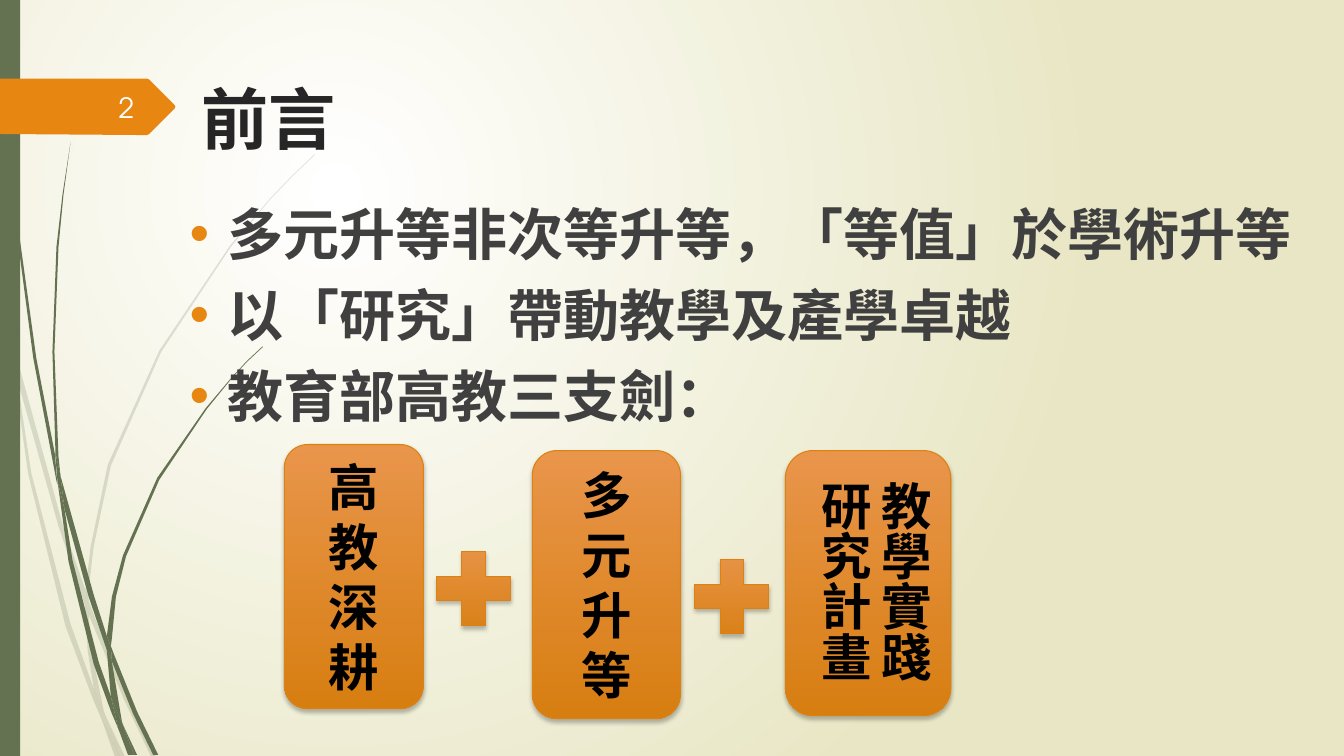
import pptx
import pptx.util
import pptx.oxml
import pptx.oxml.ns
import pptx.dml.color
import pptx.enum.shapes
import pptx.enum.text
from lxml import etree

Inches, Pt, qn = pptx.util.Inches, pptx.util.Pt, pptx.oxml.ns.qn
SHAPE = pptx.enum.shapes.MSO_SHAPE
ALIGN = pptx.enum.text.PP_ALIGN
ANCHOR = pptx.enum.text.MSO_ANCHOR
AUTOSIZE = pptx.enum.text.MSO_AUTO_SIZE

COLORS = {
    "paper": "FFFFFF", "sand": "E8E6C4", "moss": "647252", "tag": "E78712",
    "title": "262626", "body": "404040", "number": "FEFFFF", "ink": "000000",
    "glow": "E9954B", "amber": "D77E11", "edge": "DD8111",
}
HEADING_FONT = "Noto Sans CJK SC"
NUMBER_FONT = "TeX Gyre Adventor"

PALE_BLADES = [
    [(.11, 3.5), (.09, 3.22), (0, 2.82), (0, 2.99), (.1, 3.44)],
    [(.58, 5.22), (.84, 5.99), (.85, 5.86), (.62, 5.2), (.14, 3.45), (.17, 3.76)],
    [(.92, 6.07), (.88, 5.96), (.88, 6.1), (1.23, 6.94), (1.5, 7.51), (1.55, 7.51), (1.27, 6.92)],
    [(1.19, 7.51), (1.24, 7.51), (1.05, 7.11)],
    [(.93, 6.83), (.7, 6.19), (.31, 4.69), (.17, 3.76), (.11, 3.5), (.28, 4.7), (.65, 6.21),
     (.92, 6.93), (1.01, 7.14), (.99, 7.07)],
    [(.84, 5.99), (.87, 6.46), (.93, 6.83), (.96, 6.92), (1.05, 7.11), (1.03, 7.06), (.91, 6.46),
     (.88, 6.1), (.88, 6.08)],
    [(.88, 5.84), (.93, 5.42), (1.1, 4.62), (1.6, 3.49), (2.29, 2.45), (2.68, 1.98), (2.9, 1.75),
     (3.12, 1.54), (3.12, 1.53), (2.89, 1.75), (2.68, 1.97), (2.28, 2.44), (1.58, 3.48),
     (1.07, 4.61), (.9, 5.42), (.85, 5.84), (.85, 5.86), (.88, 5.96)],
    [(1.01, 7.14), (1.14, 7.51), (1.19, 7.51)],
    [(.88, 6.08), (.88, 6.1), (.88, 5.96), (.85, 5.86), (.84, 5.99)],
    [(.96, 6.92), (.93, 6.83), (.99, 7.07), (1.01, 7.14), (1.19, 7.51), (1.05, 7.11)],
]
DARK_BLADES = [
    [(.07, 1.1), (.17, 2.33), (.33, 3.55), (.56, 4.77), (.57, 4.81), (.55, 4.57), (.55, 4.53),
     (.36, 3.55), (.19, 2.32), (.08, 1.09), (.05, .48), (.04, 0), (.03, 0), (.04, .48)],
    [(.88, 5.92), (1.06, 6.45), (1.06, 6.31), (.93, 5.9), (.6, 4.72), (.64, 5.05)],
    [(1.13, 6.49), (1.1, 6.41), (1.11, 6.56), (1.32, 7.08), (1.52, 7.49), (1.57, 7.49), (1.36, 7.06)],
    [(1.1, 6.91), (.98, 6.57), (.72, 5.56), (.64, 5.05), (.57, 4.77), (.68, 5.57), (.93, 6.59),
     (1.11, 7.08), (1.17, 7.22), (1.16, 7.17)],
    [(.6, 4.72), (.58, 4.53), (.54, 3.49), (.58, 2.45), (.63, 1.93), (.7, 1.41), (.62, 1.93),
     (.56, 2.45), (.52, 3.49), (.55, 4.49)],
    [(1.33, 7.49), (1.36, 7.49), (1.22, 7.19)],
    [(.57, 4.77), (.64, 5.05), (.6, 4.72), (.55, 4.49), (.55, 4.53)],
    [(1.11, 6.33), (1.15, 5.92), (1.25, 5.52), (1.58, 4.76), (2.05, 4.06), (2.31, 3.74),
     (2.45, 3.59), (2.61, 3.44), (2.6, 3.44), (2.45, 3.58), (2.31, 3.73), (2.04, 4.05),
     (1.56, 4.74), (1.22, 5.51), (1.11, 5.92), (1.06, 6.31), (1.1, 6.41)],
    [(1.17, 7.22), (1.27, 7.49), (1.31, 7.49)],
    [(1.06, 6.45), (1.1, 6.91), (1.16, 7.06), (1.22, 7.19), (1.21, 7.16), (1.11, 6.56), (1.09, 6.51)],
    [(1.06, 6.45), (1.09, 6.51), (1.11, 6.56), (1.1, 6.41), (1.06, 6.31)],
    [(1.16, 7.06), (1.1, 6.91), (1.16, 7.17), (1.17, 7.22), (1.3, 7.49), (1.33, 7.49), (1.22, 7.19)],
]
NUMBER_TAG = [(1.73, 1.08), (1.48, 1.33), (1.46, 1.34), (1.36, 1.34), (0, 1.33), (0, .78),
              (1.46, .78), (1.48, .79), (1.73, 1.04), (1.74, 1.06)]


class SlideBuilder:
    """Holds the slide and its style, with a method for each kind of element."""

    def __init__(self, deck):
        self.slide = deck.slides.add_slide(deck.slide_layouts[1])
        self.shapes = self.slide.shapes

    def rgb(self, key):
        return pptx.dml.color.RGBColor.from_string(COLORS[key])

    def gradient(self, fill, start, end):
        fill.gradient()
        for stop, key in zip(fill.gradient_stops, (start, end)):
            stop.color.rgb = self.rgb(key)

    def background(self):
        self.gradient(self.slide.background.fill, "paper", "sand")
        direction = self.slide.element.find(".//" + qn("a:lin"))
        circle = etree.Element(qn("a:path"), {"path": "circle"})
        etree.SubElement(circle, qn("a:fillToRect"), l="50000", t="50000", r="100000", b="100000")
        direction.getparent().replace(direction, circle)

    def flat(self, shape, key, opacity=100):
        shape.shadow.inherit = False
        shape.fill.solid()
        shape.fill.fore_color.rgb = self.rgb(key)
        shape.line.fill.background()
        if opacity < 100:
            color = shape.element.spPr.find(".//" + qn("a:srgbClr"))
            etree.SubElement(color, qn("a:alpha"), val=str(opacity * 1000))

    def outline(self, points, key, opacity=100):
        start, *rest = [(Inches(x), Inches(y)) for x, y in points]
        pen = self.shapes.build_freeform(*start)
        pen.add_line_segments(rest)
        self.flat(pen.convert_to_shape(), key, opacity)

    def bar(self, box, key):
        self.flat(self.shapes.add_shape(SHAPE.RECTANGLE, *map(Inches, box)), key)

    def glossy(self, preset, box):
        shape = self.shapes.add_shape(preset, *map(Inches, box))
        self.gradient(shape.fill, "glow", "amber")
        shape.fill.gradient_angle = 270
        shape.line.color.rgb = self.rgb("edge")
        shape.line.width = Pt(0.75)
        shape.shadow.inherit = False
        effects = shape.element.spPr.find(qn("a:effectLst"))
        shadow = etree.SubElement(effects, qn("a:outerShdw"), blurRad=str(Pt(3)), dist=str(Pt(2)),
                                  dir="5400000", algn="ctr", rotWithShape="0")
        color = etree.SubElement(shadow, qn("a:srgbClr"), val=COLORS["ink"])
        etree.SubElement(color, qn("a:alpha"), val="25000")
        return shape

    def add_lines(self, frame, lines, size, key, align, leading=None, font=HEADING_FONT, bold=True):
        frame.word_wrap = True
        for index, line in enumerate(lines):
            paragraph = frame.add_paragraph() if index else frame.paragraphs[0]
            paragraph.alignment = align
            if leading:
                paragraph.line_spacing = Pt(leading)
            run = paragraph.add_run()
            run.text = line
            run.font.size, run.font.bold = Pt(size), bold
            run.font.color.rgb = self.rgb(key)
            run.font.name = font
            etree.SubElement(run._r.get_or_add_rPr(), qn("a:ea"), typeface=font)

    def text_box(self, box):
        return self.shapes.add_textbox(*map(Inches, box)).text_frame

    def placeholder(self, holder, box, lines, size, key, leading):
        holder.left, holder.top, holder.width, holder.height = map(Inches, box)
        self.shapes.element.append(holder.element)
        frame = holder.text_frame
        frame.auto_size = AUTOSIZE.NONE
        frame.vertical_anchor = ANCHOR.TOP
        self.add_lines(frame, lines, size, key, ALIGN.LEFT, leading)
        return frame

    def bullets(self, frame):
        for paragraph in frame.paragraphs:
            paragraph.space_before = Pt(10)
            properties = paragraph._p.get_or_add_pPr()
            properties.set("marL", str(Inches(0.38)))
            properties.set("indent", str(-Inches(0.38)))
            color = etree.SubElement(properties, qn("a:buClr"))
            etree.SubElement(color, qn("a:srgbClr"), val=COLORS["tag"])
            etree.SubElement(properties, qn("a:buFont"), typeface="Arial")
            etree.SubElement(properties, qn("a:buChar"), char="•")


def main():
    deck = pptx.Presentation()
    deck.slide_width, deck.slide_height = Inches(13.33), Inches(7.5)
    page = SlideBuilder(deck)
    title, body = page.shapes.title, page.slide.placeholders[1]

    page.background()
    for blades, opacity in ((PALE_BLADES, 20), (DARK_BLADES, 100)):
        for blade in blades:
            page.outline(blade, "moss", opacity)
    page.bar((0, 0, 0.2, 7.5), "moss")
    page.outline(NUMBER_TAG, "tag")

    page.placeholder(title, (1.9, 0.68, 10.69, 1.4), ["前言"], 48, "title", 60)
    topics = ["多元升等非次等升等，「等值」於學術升等", "以「研究」帶動教學及產學卓越", "教育部高教三支劍："]
    page.bullets(page.placeholder(body, (1.78, 1.93, 11.36, 4.13), topics, 40, "body", 48))

    number = page.text_box((0.58, 0.86, 0.85, 0.4))
    number.vertical_anchor = ANCHOR.MIDDLE
    page.add_lines(number, ["2"], 20, "number", ALIGN.RIGHT, font=NUMBER_FONT, bold=False)

    for sword, box in (("多元升等", (5.28, 4.47, 1.47, 2.66)), ("高教深耕", (2.82, 4.41, 1.38, 2.62))):
        frame = page.glossy(SHAPE.ROUNDED_RECTANGLE, box).text_frame
        frame.vertical_anchor = ANCHOR.MIDDLE
        page.add_lines(frame, sword, 36, "ink", ALIGN.CENTER, 43)
    page.glossy(SHAPE.ROUNDED_RECTANGLE, (7.79, 4.47, 1.64, 2.63))
    practice = page.text_box((7.91, 4.67, 1.41, 2.25))
    page.add_lines(practice, ["教學實踐", "研究計畫"], 36, "ink", ALIGN.CENTER, 43)
    practice.auto_size = AUTOSIZE.SHAPE_TO_FIT_TEXT
    practice._txBody.bodyPr.set("vert", "eaVert")

    for left, top in ((4.2, 5.34), (6.76, 5.42)):
        page.glossy(SHAPE.MATH_PLUS, (left, top, 1, 1))
    deck.save("out.pptx")


if __name__ == "__main__":
    main()
